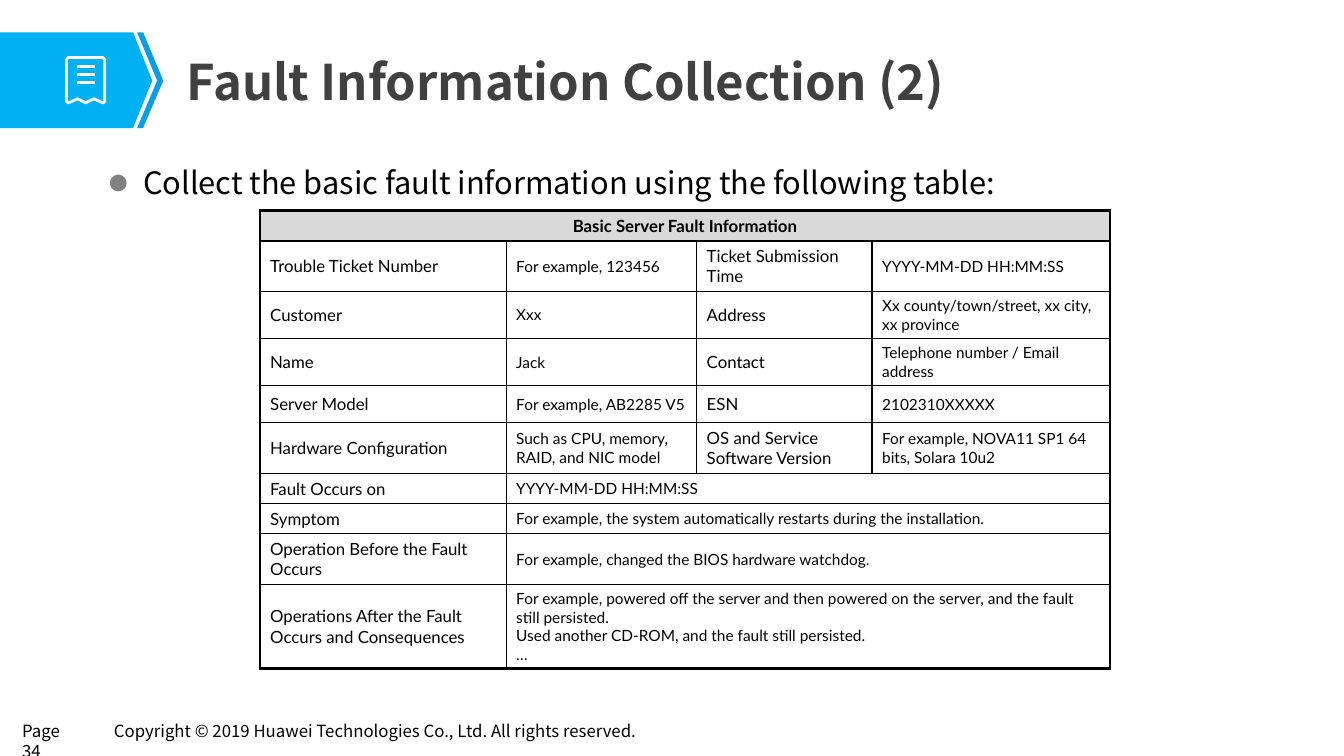
from lxml import etree
from pptx import Presentation
from pptx.dml.color import RGBColor
from pptx.enum.shapes import MSO_CONNECTOR
from pptx.enum.text import MSO_ANCHOR, PP_ALIGN
from pptx.oxml.ns import qn
from pptx.util import Pt

PX = 9144
STRAIGHT = MSO_CONNECTOR.STRAIGHT
TOP, MIDDLE = MSO_ANCHOR.TOP, MSO_ANCHOR.MIDDLE
LEFT, CENTER, JUSTIFY = PP_ALIGN.LEFT, PP_ALIGN.CENTER, PP_ALIGN.JUSTIFY
SANS, LATO = "Noto Sans CJK SC", "Lato"
COLORS = {
    "black": "000000", "white": "FFFFFF", "title": "404040", "bullet": "808080",
    "banner": "00B0F0", "chevron": "0B9CE5", "header": "D9D9D9",
}

TITLE = "Fault Information Collection (2)"
BODY = "Collect the basic fault information using the following table:"
FOOTERS = [
    ("Page 34", (13, 711, 77, 29)),
    ("Copyright © 2019 Huawei Technologies Co., Ltd. All rights reserved.", (104, 711, 566, 29)),
]

TABLE_BOX = (258, 209, 843, 466)
COLUMN_WIDTHS = [244, 189, 174, 236]
ROW_HEIGHTS = [29, 50, 44, 44, 37, 50, 29, 29, 50, 80]
ROWS = [
    ["Basic Server Fault Information"],
    ["Trouble Ticket Number", "For example, 123456", "Ticket Submission Time", "YYYY-MM-DD HH:MM:SS"],
    ["Customer", "Xxx", "Address", "Xx county/town/street, xx city, xx province"],
    ["Name", "Jack", "Contact", "Telephone number / Email address"],
    ["Server Model", "For example, AB2285 V5", "ESN", "2102310XXXXX"],
    ["Hardware Configuration", "Such as CPU, memory, RAID, and NIC model",
     "OS and Service Software Version", "For example, NOVA11 SP1 64 bits, Solara 10u2"],
    ["Fault Occurs on", "YYYY-MM-DD HH:MM:SS"],
    ["Symptom", "For example, the system automatically restarts during the installation."],
    ["Operation Before the Fault Occurs", "For example, changed the BIOS hardware watchdog."],
    ["Operations After the Fault Occurs and Consequences",
     "For example, powered off the server and then powered on the server, and the fault still persisted.\n"
     "Used another CD-ROM, and the fault still persisted.\n…"],
]

BANNER = [(132, 127), (0, 127), (0, 32), (132, 32), (151, 80)]
CHEVRON = [(142, 32), (136, 32), (156, 80), (136, 127), (142, 127), (162, 80)]
RECEIPT = [(68, 57), (102, 57), (104, 59), (104, 101), (102, 102), (93, 98), (85, 102),
           (77, 98), (68, 102), (66, 101), (66, 59)]
RECEIPT_LINES = {"left": 76, "right": 94, "top": 66, "step": 8, "count": 3}


def emu(*lengths):
    return [length * PX for length in lengths]


def color(name):
    return RGBColor.from_string(COLORS[name])


def style(paragraph, font_name, size, color_name="black", bold=False, align=LEFT):
    paragraph.alignment = align
    font = paragraph.font
    font.name, font.size, font.bold = font_name, Pt(size), bold
    font.color.rgb = color(color_name)


def add_text(slide, text, box, anchor=TOP, margins=(9, 4)):
    frame = slide.shapes.add_textbox(*emu(*box)).text_frame
    frame.word_wrap = True
    frame.vertical_anchor = anchor
    frame.margin_left = frame.margin_right = margins[0] * PX
    frame.margin_top = frame.margin_bottom = margins[1] * PX
    frame.text = text
    return frame.paragraphs[0]


def add_bullet(paragraph, indent):
    properties = paragraph._p.get_or_add_pPr()
    properties.set("marL", str(indent * PX))
    properties.set("indent", str(-indent * PX))
    bullet_color = etree.SubElement(properties, qn("a:buClr"))
    etree.SubElement(bullet_color, qn("a:srgbClr"), val=COLORS["bullet"])
    etree.SubElement(properties, qn("a:buSzPct"), val="60000")
    etree.SubElement(properties, qn("a:buFont"), typeface=SANS)
    etree.SubElement(properties, qn("a:buChar"), char="●")


def add_outline(slide, points, fill=None, line=None):
    builder = slide.shapes.build_freeform(*points[0], scale=PX)
    builder.add_line_segments(points[1:], close=True)
    shape = builder.convert_to_shape()
    shape.shadow.inherit = False
    if fill:
        shape.fill.solid()
        shape.fill.fore_color.rgb = color(fill)
    else:
        shape.fill.background()
    if line:
        shape.line.color.rgb = color(line)
        shape.line.width = Pt(2)
    else:
        shape.line.fill.background()


def add_receipt(slide):
    add_outline(slide, RECEIPT, line="white")
    lines = RECEIPT_LINES
    for number in range(lines["count"]):
        y = lines["top"] + number * lines["step"]
        connector = slide.shapes.add_connector(STRAIGHT, *emu(lines["left"], y, lines["right"], y))
        connector.line.color.rgb = color("white")
        connector.line.width = Pt(1.75)
        etree.SubElement(connector._element.spPr, qn("a:effectLst"))


def set_borders(cell, outer_sides):
    properties = cell._tc.get_or_add_tcPr()
    for side in "LRTB":
        width = Pt(2.25 if side in outer_sides else 1)
        border = etree.SubElement(properties, qn("a:ln" + side), w=str(width))
        fill = etree.SubElement(border, qn("a:solidFill"))
        etree.SubElement(fill, qn("a:srgbClr"), val=COLORS["black"])


def add_fault_table(slide):
    last_row, last_column = len(ROWS) - 1, len(COLUMN_WIDTHS) - 1
    table = slide.shapes.add_table(last_row + 1, last_column + 1, *emu(*TABLE_BOX)).table
    table.first_row = table.horz_banding = False
    for column, width in zip(table.columns, COLUMN_WIDTHS):
        column.width = width * PX
    for row_number, texts in enumerate(ROWS):
        table.rows[row_number].height = ROW_HEIGHTS[row_number] * PX
        is_header = row_number == 0
        for column_number in range(last_column + 1):
            cell = table.cell(row_number, column_number)
            edges = {"L": column_number == 0, "R": column_number == last_column or is_header,
                     "T": is_header, "B": row_number == last_row}
            if column_number == len(texts) - 1 < last_column:
                cell.merge(table.cell(row_number, last_column))
                edges["R"] = True
            set_borders(cell, [side for side, outer in edges.items() if outer])
            if is_header:
                cell.fill.solid()
                cell.fill.fore_color.rgb = color("header")
            else:
                cell.fill.background()
            cell.vertical_anchor = MIDDLE
            if column_number < len(texts):
                cell.text = texts[column_number]
                size = 11 if column_number % 2 else 12
                for paragraph in cell.text_frame.paragraphs:
                    style(paragraph, LATO, size, bold=is_header, align=CENTER if is_header else LEFT)


def main():
    presentation = Presentation()
    presentation.slide_width, presentation.slide_height = emu(1333, 750)
    slide = presentation.slides.add_slide(presentation.slide_layouts[6])
    for text, box in FOOTERS:
        style(add_text(slide, text, box), SANS, 12)
    add_outline(slide, BANNER, fill="banner")
    add_outline(slide, CHEVRON, fill="chevron")
    add_receipt(slide)
    body = add_text(slide, BODY, (100, 144, 1155, 503))
    body.line_spacing = 1.4
    add_bullet(body, 33)
    style(body, SANS, 22, align=JUSTIFY)
    title = add_text(slide, TITLE, (174, 45, 1075, 70), MIDDLE, (11, 5))
    style(title, SANS, 35, "title", bold=True)
    add_fault_table(slide)
    presentation.save("out.pptx")


if __name__ == "__main__":
    main()
